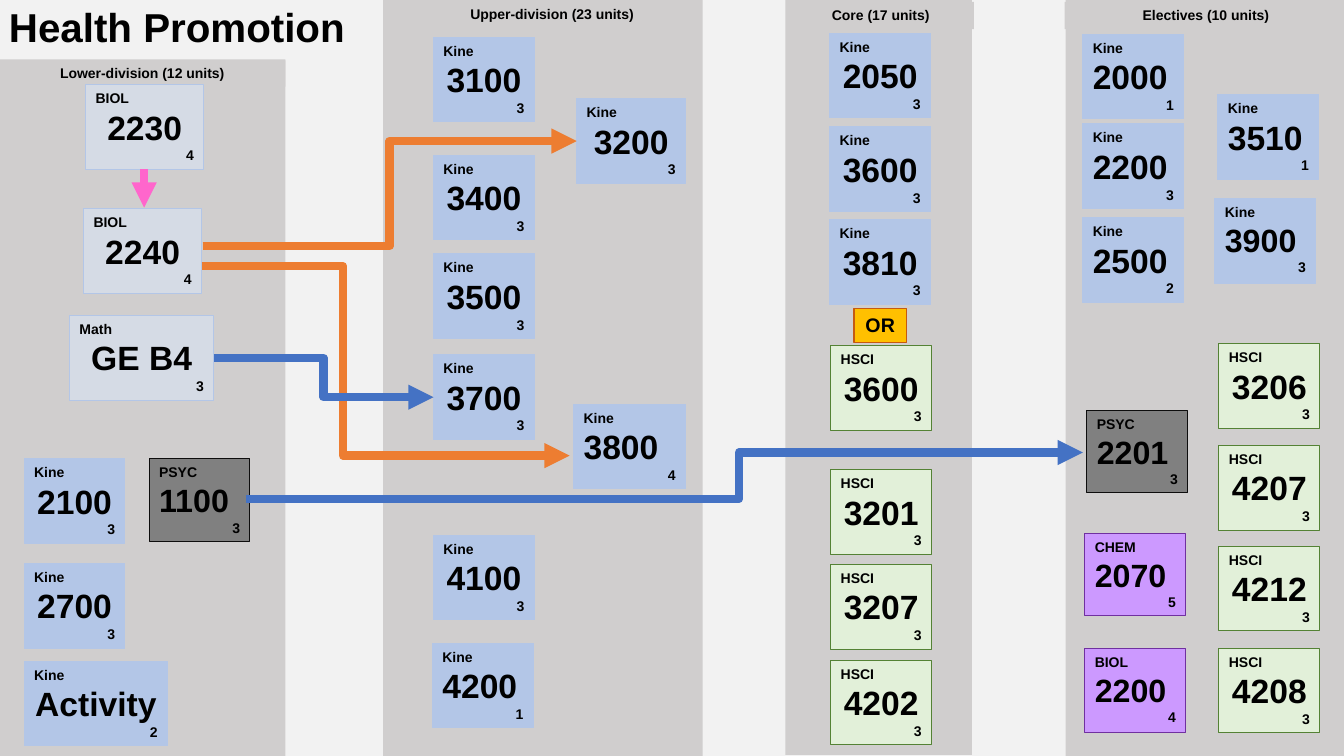
from pptx import Presentation, util as u
from pptx.dml.color import RGBColor
from pptx.enum import shapes, text
from pptx.oxml.ns import qn
from lxml import etree

BLACK = RGBColor(0x00, 0x00, 0x00)
PAPER = RGBColor(0xF2, 0xF2, 0xF2)
PANEL = RGBColor(0xD0, 0xCE, 0xCE)
PALE = RGBColor(0xD5, 0xDB, 0xE5)
BLUE = RGBColor(0xB3, 0xC6, 0xE7)
MINT = RGBColor(0xE2, 0xF0, 0xD9)
GREEN = RGBColor(0x54, 0x82, 0x35)
GREY = RGBColor(0x80, 0x80, 0x80)
INK = RGBColor(0x0D, 0x0D, 0x0D)
LILAC = RGBColor(0xCC, 0x99, 0xFF)
PURPLE = RGBColor(0x70, 0x30, 0xA0)
GOLD = RGBColor(0xFF, 0xC0, 0x00)
RUST = RGBColor(0xC5, 0x5A, 0x11)
PINK = RGBColor(0xFF, 0x66, 0xCC)
ORANGE = RGBColor(0xED, 0x7D, 0x31)
ROYAL = RGBColor(0x44, 0x72, 0xC4)

LEFT, MID, RIGHT = (text.PP_ALIGN.LEFT, text.PP_ALIGN.CENTER,
                    text.PP_ALIGN.RIGHT)

deck = Presentation()
deck.slide_width, deck.slide_height = u.Inches(13.33), u.Inches(7.5)
slide = deck.slides.add_slide(deck.slide_layouts[6])
slide.background.fill.solid()
slide.background.fill.fore_color.rgb = PAPER

# Grid: 133.3 columns by 75 rows
COL = deck.slide_width / 133.3
ROW = deck.slide_height / 75


def write(shape, lines):
    """Fill a shape with (words, size, align) lines in bold Arial."""
    frame = shape.text_frame
    frame.word_wrap = True
    for i, (words, size, align) in enumerate(lines):
        para = frame.add_paragraph() if i else frame.paragraphs[0]
        para.alignment = align
        run = para.add_run()
        run.text = words
        look = {"name": "Arial", "size": u.Pt(size), "bold": True}
        for key, val in look.items():
            setattr(run.font, key, val)
        run.font.color.rgb = BLACK
    return frame


def box(x, y, w, h, fill, edge=None, lines=()):
    """Draw a flat rectangle, placed in grid columns and rows."""
    shape = slide.shapes.add_shape(
        shapes.MSO_SHAPE.RECTANGLE,
        *(round(n) for n in (x * COL, y * ROW, w * COL, h * ROW)))
    shape.shadow.inherit = False
    shape.fill.solid()
    shape.fill.fore_color.rgb = fill
    if edge is None:
        shape.line.fill.background()
    else:
        shape.line.color.rgb = edge
        shape.line.width = u.Pt(0.75)
    if lines:
        frame = write(shape, lines)
        frame.vertical_anchor = text.MSO_ANCHOR.TOP
        frame.auto_size = text.MSO_AUTO_SIZE.SHAPE_TO_FIT_TEXT


# Panels
for x, y, w, h in [(77.9, 0, 18.5, 74.9), (0, 6, 28.3, 69),
                   (105.7, 0, 28, 75), (38, 0, 31.7, 75)]:
    box(x, y, w, h, PANEL)

# Panel headings
for words, x, y, w in [("Lower-division (12 units)", -0.1, 5.9, 28.4),
                       ("Upper-division (23 units)", 40.4, 0.1, 28.7),
                       ("Core (17 units)", 78.1, 0.2, 18.5),
                       ("Electives (10 units)", 105.6, 0.2, 28)]:
    box(x, y, w, 2.7, PANEL, lines=[(words, 10, MID)])

# Title
title = slide.shapes.add_textbox(
    round(-0.1 * COL), 0, round(39.8 * COL), round(5.8 * ROW))
frame = write(title, [("Health Promotion", 28.8, LEFT)])
frame.vertical_anchor = text.MSO_ANCHOR.MIDDLE
frame.paragraphs[0].line_spacing = 0.9

# Course cards: department, fill, edge, number size and alignment,
# column, width, then (number, units, row) down the stack
stacks = [
    ("BIOL", PALE, BLUE, 24, MID, 8.5, 11.7, [("2230", 4, 8.4)]),
    ("BIOL", PALE, BLUE, 24, MID, 8.3, 11.7, [("2240", 4, 20.7)]),
    ("Math", PALE, BLUE, 24, MID, 6.9, 14.3, [("GE B4", 3, 31.3)]),
    ("Kine", BLUE, BLUE, 24, MID, 2.4, 10,
     [("2100", 3, 45.5), ("2700", 3, 55.9)]),
    ("Kine", BLUE, BLUE, 24, MID, 2.4, 14.2, [("Activity", 2, 65.6)]),
    ("PSYC", GREY, INK, 23, LEFT, 14.8, 10, [("1100", 3, 45.5)]),
    ("Kine", BLUE, BLUE, 24, MID, 43, 10,
     [("3100", 3, 3.7), ("3400", 3, 15.4), ("3500", 3, 25.2),
      ("3700", 3, 35.2), ("4100", 3, 53.1)]),
    ("Kine", BLUE, BLUE, 24, LEFT, 42.9, 10, [("4200", 1, 63.8)]),
    ("Kine", BLUE, BLUE, 24, MID, 57.2, 10.8, [("3200", 3, 9.8)]),
    ("Kine", BLUE, BLUE, 24, LEFT, 56.9, 11.1, [("3800", 4, 40.1)]),
    ("Kine", BLUE, BLUE, 24, MID, 82.3, 10,
     [("2050", 3, 3.3), ("3600", 3, 12.6), ("3810", 3, 21.8)]),
    ("HSCI", MINT, GREEN, 24, MID, 82.4, 10,
     [("3600", 3, 34.3), ("3201", 3, 46.6), ("3207", 3, 56),
      ("4202", 3, 65.5)]),
    ("Kine", BLUE, BLUE, 24, LEFT, 107.4, 10,
     [("2000", 1, 3.4), ("2200", 3, 12.3), ("2500", 2, 21.6)]),
    ("PSYC", GREY, INK, 23, LEFT, 107.8, 10, [("2201", 3, 40.7)]),
    ("CHEM", LILAC, PURPLE, 23, LEFT, 107.6, 10, [("2070", 5, 52.9)]),
    ("BIOL", LILAC, PURPLE, 23, LEFT, 107.6, 10, [("2200", 4, 64.3)]),
    ("Kine", BLUE, BLUE, 24, LEFT, 120.8, 10, [("3510", 1, 9.4)]),
    ("Kine", BLUE, BLUE, 23, LEFT, 120.5, 10, [("3900", 3, 19.7)]),
    ("HSCI", MINT, GREEN, 24, MID, 120.9, 10,
     [("3206", 3, 34.1), ("4207", 3, 44.2), ("4212", 3, 54.2),
      ("4208", 3, 64.3)]),
]
for dept, fill, edge, size, align, x, w, cards in stacks:
    tall = 8.2 if dept in ("PSYC", "CHEM") else 8.4
    for num, units, y in cards:
        box(x, y, w, tall, fill, edge,
            [(dept, 10, LEFT), (num, size, align), (str(units), 10, RIGHT)])

box(84.7, 30.6, 5.2, 3.4, GOLD, RUST, [("OR", 14, MID)])

# Prerequisite arrows: start, end, colour, column of the bend
for x1, y1, x2, y2, hue, bend in [
        (14.3, 16.8, 14.3, 20.6, PINK, None),
        (20, 26.4, 56.5, 45.2, ORANGE, 34),
        (21.2, 35.5, 43, 39.4, ROYAL, 32.1),
        (20.1, 24.4, 57.2, 14, ORANGE, 38.65),
        (24.4, 49.5, 107.4, 44.9, ROYAL, 73.3)]:
    kind = shapes.MSO_CONNECTOR.ELBOW if bend else shapes.MSO_CONNECTOR.STRAIGHT
    link = slide.shapes.add_connector(
        kind, *(round(n) for n in (x1 * COL, y1 * ROW, x2 * COL, y2 * ROW)))
    link.line.color.rgb = hue
    link.line.width = u.Pt(6)
    props = link._element.spPr
    if bend:
        share = round((bend - x1) / (x2 - x1) * 100000)
        guides = props.find(qn("a:prstGeom")).get_or_add_avLst()
        etree.SubElement(guides, qn("a:gd"), name="adj1", fmla=f"val {share}")
    etree.SubElement(props.find(qn("a:ln")), qn("a:tailEnd"), type="triangle")
    etree.SubElement(props, qn("a:effectLst"))

deck.save("out.pptx")
